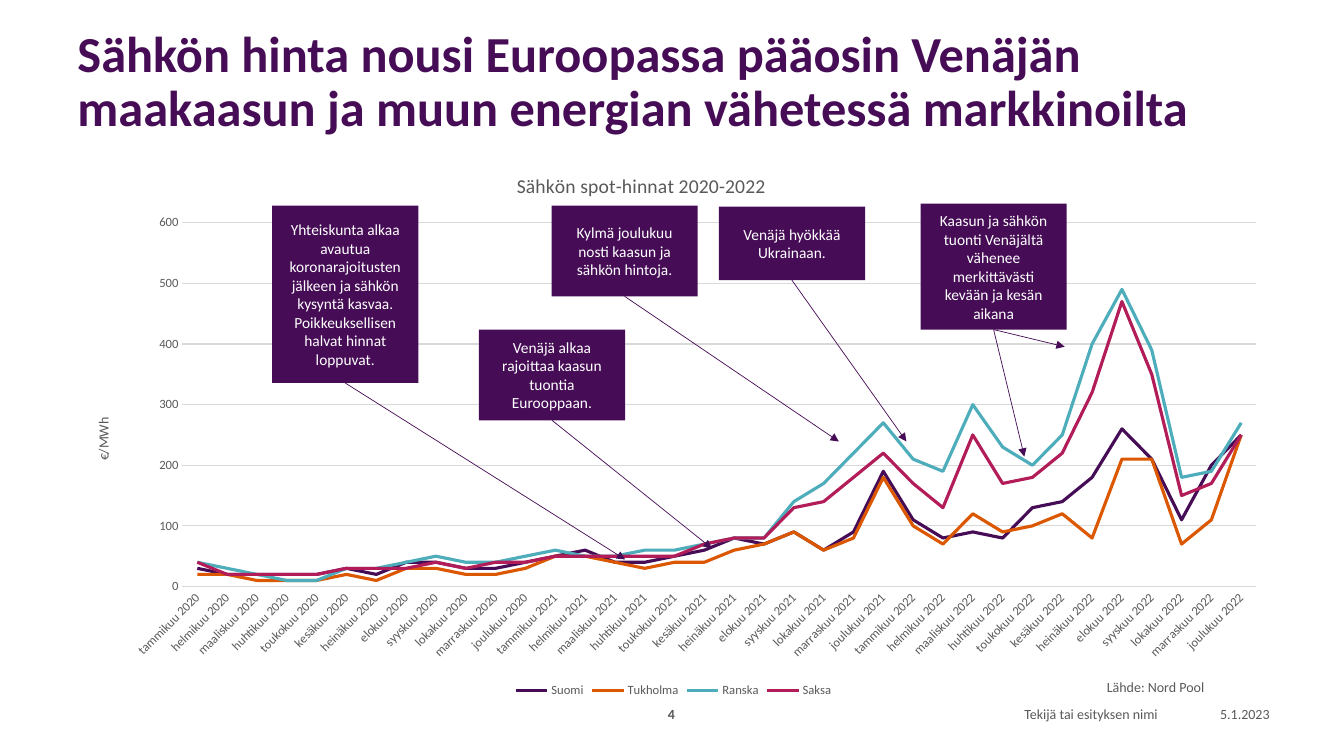
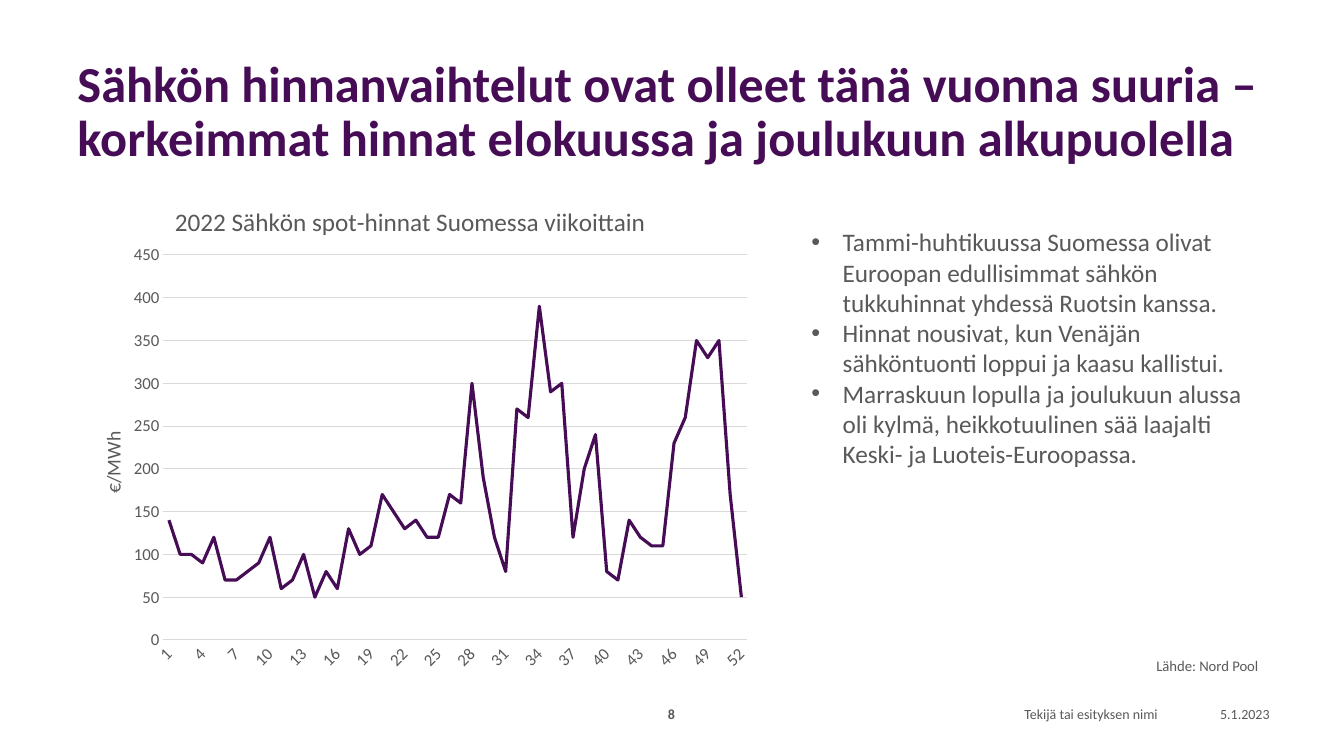
from pptx import Presentation
from pptx.chart.data import CategoryChartData
from pptx.dml.color import RGBColor
from pptx.enum import chart as ch, shapes, text
from pptx.oxml import parse_xml
from pptx.oxml.ns import nsdecls
from pptx.util import Inches, Pt

FONT = "Calibri"
PURPLE, ORANGE, TEAL, CRIMSON = "460D56", "DB5800", "4EADBB", "B21C58"
GREY, GRID, WHITE = "595959", "D9D9D9", "FFFFFF"
LEFT, CENTER, RIGHT = text.PP_ALIGN.LEFT, text.PP_ALIGN.CENTER, text.PP_ALIGN.RIGHT
TOP, MIDDLE = text.MSO_ANCHOR.TOP, text.MSO_ANCHOR.MIDDLE

AUTHOR, DATE, SOURCE = "Tekijä tai esityksen nimi", "5.1.2023", "Lähde: Nord Pool"
MONTHS = ["tammikuu", "helmikuu", "maaliskuu", "huhtikuu", "toukokuu", "kesäkuu",
          "heinäkuu", "elokuu", "syyskuu", "lokakuu", "marraskuu", "joulukuu"]

MONTHLY = {
    "title": "Sähkön spot-hinnat 2020-2022",
    "frame": (0.67, 1.52, 12.02, 5.44),
    "plot": (1.14, 0.69, 10.65, 3.61),
    "title_at": (4.42, 0.15),
    "unit_at": (0.24, 2.6),
    "sizes": (14, 10, 9),
    "top": 600, "step": 100, "skip": 1, "legend": True,
    "cats": [f"{month} {year}" for year in (2020, 2021, 2022) for month in MONTHS],
    "series": [
        ("Suomi", PURPLE, [30, 20, 20, 20, 20, 30, 20, 40, 40, 30, 30, 40,
                           50, 60, 40, 40, 50, 60, 80, 70, 90, 60, 90, 190,
                           110, 80, 90, 80, 130, 140, 180, 260, 210, 110, 200, 250]),
        ("Tukholma", ORANGE, [20, 20, 10, 10, 10, 20, 10, 30, 30, 20, 20, 30,
                              50, 50, 40, 30, 40, 40, 60, 70, 90, 60, 80, 180,
                              100, 70, 120, 90, 100, 120, 80, 210, 210, 70, 110, 250]),
        ("Ranska", TEAL, [40, 30, 20, 10, 10, 30, 30, 40, 50, 40, 40, 50,
                          60, 50, 50, 60, 60, 70, 80, 80, 140, 170, 220, 270,
                          210, 190, 300, 230, 200, 250, 400, 490, 390, 180, 190, 270]),
        ("Saksa", CRIMSON, [40, 20, 20, 20, 20, 30, 30, 30, 40, 30, 40, 40,
                            50, 50, 50, 50, 50, 70, 80, 80, 130, 140, 180, 220,
                            170, 130, 250, 170, 180, 220, 320, 470, 350, 150, 170, 250]),
    ],
}
WEEKLY = {
    "title": "2022 Sähkön spot-hinnat Suomessa viikoittain",
    "frame": (0.67, 1.76, 6.89, 5),
    "plot": (0.95, 0.77, 5.79, 3.82),
    "title_at": (1.02, 0.22),
    "unit_at": (0.28, 2.48),
    "sizes": (18, 14, 12),
    "top": 450, "step": 50, "skip": 3, "legend": False,
    "cats": [str(week) for week in range(1, 53)],
    "series": [
        ("Suomi", PURPLE, [140, 100, 100, 90, 120, 70, 70, 80, 90, 120, 60, 70, 100,
                           50, 80, 60, 130, 100, 110, 170, 150, 130, 140, 120, 120, 170,
                           160, 300, 190, 120, 80, 270, 260, 390, 290, 300, 120, 200, 240,
                           80, 70, 140, 120, 110, 110, 230, 260, 350, 330, 350, 170, 50]),
    ],
}
CALLOUTS = [
    ("Yhteiskunta alkaa avautua koronarajoitusten jälkeen ja sähkön kysyntä kasvaa. "
     "Poikkeuksellisen halvat hinnat loppuvat.", (2.7, 2.04, 1.45, 1.76), [(6.2, 5.55)]),
    ("Kylmä joulukuu nosti kaasun ja sähkön hintoja.", (5.47, 2.04, 1.45, 0.9), [(8.32, 4.38)]),
    ("Venäjä hyökkää Ukrainaan.", (7.13, 2.05, 1.45, 0.73), [(8.99, 4.38)]),
    ("Kaasun ja sähkön tuonti Venäjältä vähenee merkittävästi kevään ja kesän aikana",
     (9.13, 2.02, 1.45, 1.25), [(10.16, 4.53), (10.56, 3.44)]),
    ("Venäjä alkaa rajoittaa kaasun tuontia Eurooppaan.", (4.75, 3.27, 1.45, 0.9), [(7.06, 5.44)]),
]
SLIDES = [
    {"number": 4, "chart": MONTHLY, "callouts": CALLOUTS, "bullets": [],
     "title": "Sähkön hinta nousi Euroopassa pääosin Venäjän maakaasun ja muun energian "
              "vähetessä markkinoilta",
     "title_box": (0.67, 0.4, 11.61, 0.85), "source": ((10.88, 6.68, 1.4, 0.27), 10)},
    {"number": 8, "chart": WEEKLY, "callouts": [],
     "title": "Sähkön hinnanvaihtelut ovat olleet tänä vuonna suuria – korkeimmat hinnat "
              "elokuussa ja joulukuun alkupuolella",
     "title_box": (0.67, 0.4, 12.02, 1.45), "source": ((11.37, 6.47, 1.42, 0.29), 10.5),
     "bullets": [
         "Tammi-huhtikuussa Suomessa olivat Euroopan edullisimmat sähkön tukkuhinnat "
         "yhdessä Ruotsin kanssa.",
         "Hinnat nousivat, kun Venäjän sähköntuonti loppui ja kaasu kallistui.",
         "Marraskuun lopulla ja joulukuun alussa oli kylmä, heikkotuulinen sää laajalti "
         "Keski- ja Luoteis-Euroopassa."]},
]


def rgb(color):
    """Turn a hex string into a colour."""
    return RGBColor.from_string(color)


def style(font, size, color=GREY, bold=False):
    """Set typeface, size, colour and weight."""
    font.name, font.size, font.bold = FONT, Pt(size), bold
    font.color.rgb = rgb(color)


def write(sp, lines, size, color=GREY, bold=False, align=LEFT, anchor=TOP, spacing=None, bullet=False):
    """Fill a shape with paragraphs in one style."""
    tf = sp.text_frame
    tf.word_wrap, tf.vertical_anchor = True, anchor
    tf.text = "\n".join(lines)
    for p in tf.paragraphs:
        p.alignment, p.line_spacing = align, spacing
        if bullet:
            pPr = p._p.get_or_add_pPr()
            pPr.set("marL", str(Inches(0.31)))
            pPr.set("indent", str(-Inches(0.31)))
            pPr.append(parse_xml(f'<a:buFont {nsdecls("a")} typeface="Arial"/>'))
            pPr.append(parse_xml(f'<a:buChar {nsdecls("a")} char="•"/>'))
        for r in p.runs:
            style(r.font, size, color, bold)


def add_text(slide, box, lines, size, **look):
    """Add a text box."""
    write(slide.shapes.add_textbox(*map(Inches, box)), lines, size, **look)


def add_arrow(slide, start, end):
    """Add a thin straight arrow."""
    cx = slide.shapes.add_connector(shapes.MSO_CONNECTOR.STRAIGHT, *map(Inches, start + end))
    cx.line.color.rgb, cx.line.width = rgb(PURPLE), Pt(0.5)
    cx.line._get_or_add_ln().append(parse_xml(f'<a:tailEnd {nsdecls("a")} type="triangle"/>'))
    cx._element.spPr.append(parse_xml(f'<a:effectLst {nsdecls("a")}/>'))


def add_callout(slide, words, box, targets):
    """Add a filled box with arrows from its bottom centre."""
    sp = slide.shapes.add_shape(shapes.MSO_SHAPE.RECTANGLE, *map(Inches, box))
    sp.shadow.inherit = False
    sp.fill.solid()
    sp.fill.fore_color.rgb = rgb(PURPLE)
    sp.line.fill.background()
    write(sp, [words], 11, color=WHITE, align=CENTER, anchor=MIDDLE)
    x, y, w, h = box
    for target in targets:
        add_arrow(slide, (x + w / 2, y + h), target)


def place(element, frame, at, inner=False):
    """Fix a chart part at inches from the corner of the chart."""
    for old in element.xpath("c:layout"):
        element.remove(old)
    parts = '<c:layoutTarget val="inner"/>' if inner else ""
    parts += '<c:xMode val="edge"/><c:yMode val="edge"/>'
    for tag, length, whole in zip("xywh", at, frame[2:] * 2):
        parts += f'<c:{tag} val="{length / whole:.4f}"/>'
    layout = f'<c:layout {nsdecls("c")}><c:manualLayout>{parts}</c:manualLayout></c:layout>'
    element.insert(len(element.xpath("c:tx")), parse_xml(layout))


def add_title(title, words, size, frame, at):
    """Write and place the title of a chart or an axis."""
    title.text_frame.text = words
    style(title.text_frame.paragraphs[0].runs[0].font, size)
    place(title._element, frame, at)


def add_line_chart(slide, spec):
    """Add a line chart with a title, a unit and grid lines."""
    data = CategoryChartData()
    data.categories = spec["cats"]
    for name, _, values in spec["series"]:
        data.add_series(name, values)
    frame = spec["frame"]
    title_size, unit_size, label_size = spec["sizes"]
    chart = slide.shapes.add_chart(ch.XL_CHART_TYPE.LINE, *map(Inches, frame), data).chart
    style(chart.font, 10)
    add_title(chart.chart_title, spec["title"], title_size, frame, spec["title_at"])
    place(chart._chartSpace.xpath("c:chart/c:plotArea")[0], frame, spec["plot"], inner=True)

    cat, val = chart.category_axis, chart.value_axis
    for axis in (cat, val):
        axis.major_tick_mark = axis.minor_tick_mark = ch.XL_TICK_MARK.NONE
        style(axis.tick_labels.font, label_size)
    cat.format.line.color.rgb, cat.format.line.width = rgb(GRID), Pt(0.75)
    cat._element.xpath("c:txPr/a:bodyPr")[0].set("rot", "-2700000")
    skip = parse_xml(f'<c:tickLblSkip {nsdecls("c")} val="{spec["skip"]}"/>')
    cat._element.xpath("c:noMultiLvlLbl")[0].addprevious(skip)
    val.minimum_scale, val.maximum_scale, val.major_unit = 0, spec["top"], spec["step"]
    val.format.line.fill.background()
    grid = val.major_gridlines.format.line
    grid.color.rgb, grid.width = rgb(GRID), Pt(0.75)
    add_title(val.axis_title, "€/MWh", unit_size, frame, spec["unit_at"])
    val._element.xpath("c:title//a:bodyPr")[0].set("rot", "-5400000")

    chart.has_legend = spec["legend"]
    if spec["legend"]:
        chart.legend.position = ch.XL_LEGEND_POSITION.BOTTOM
        chart.legend.include_in_layout = False
        style(chart.legend.font, label_size)
    chart.plots[0].vary_by_categories = False
    for series, (_, color, _) in zip(chart.plots[0].series, spec["series"]):
        series.smooth = False
        series.marker.style = ch.XL_MARKER_STYLE.NONE
        series.format.line.color.rgb, series.format.line.width = rgb(color), Pt(2.25)


def add_slide(prs, content):
    """Build one slide with its title, chart, callouts and footer."""
    slide = prs.slides.add_slide(prs.slide_layouts[6])
    add_text(slide, content["title_box"], [content["title"]], 36, color=PURPLE, bold=True,
             anchor=MIDDLE, spacing=0.9)
    for x, w, words, align, bold in [(11.58, 1.11, DATE, RIGHT, False),
                                     (7.41, 4.17, AUTHOR, RIGHT, False),
                                     (6.36, 0.6, str(content["number"]), CENTER, True)]:
        add_text(slide, (x, 6.95, w, 0.27), [words], 10, bold=bold, align=align, anchor=MIDDLE)
    add_line_chart(slide, content["chart"])
    box, size = content["source"]
    add_text(slide, box, [SOURCE], size)
    for callout in content["callouts"]:
        add_callout(slide, *callout)
    if content["bullets"]:
        add_text(slide, (7.95, 2.2, 4.47, 2.52), content["bullets"], 18, bullet=True)


def main():
    """Build and save the presentation."""
    prs = Presentation()
    prs.slide_width, prs.slide_height = Inches(13.33), Inches(7.5)
    for content in SLIDES:
        add_slide(prs, content)
    prs.save("out.pptx")


if __name__ == "__main__":
    main()
